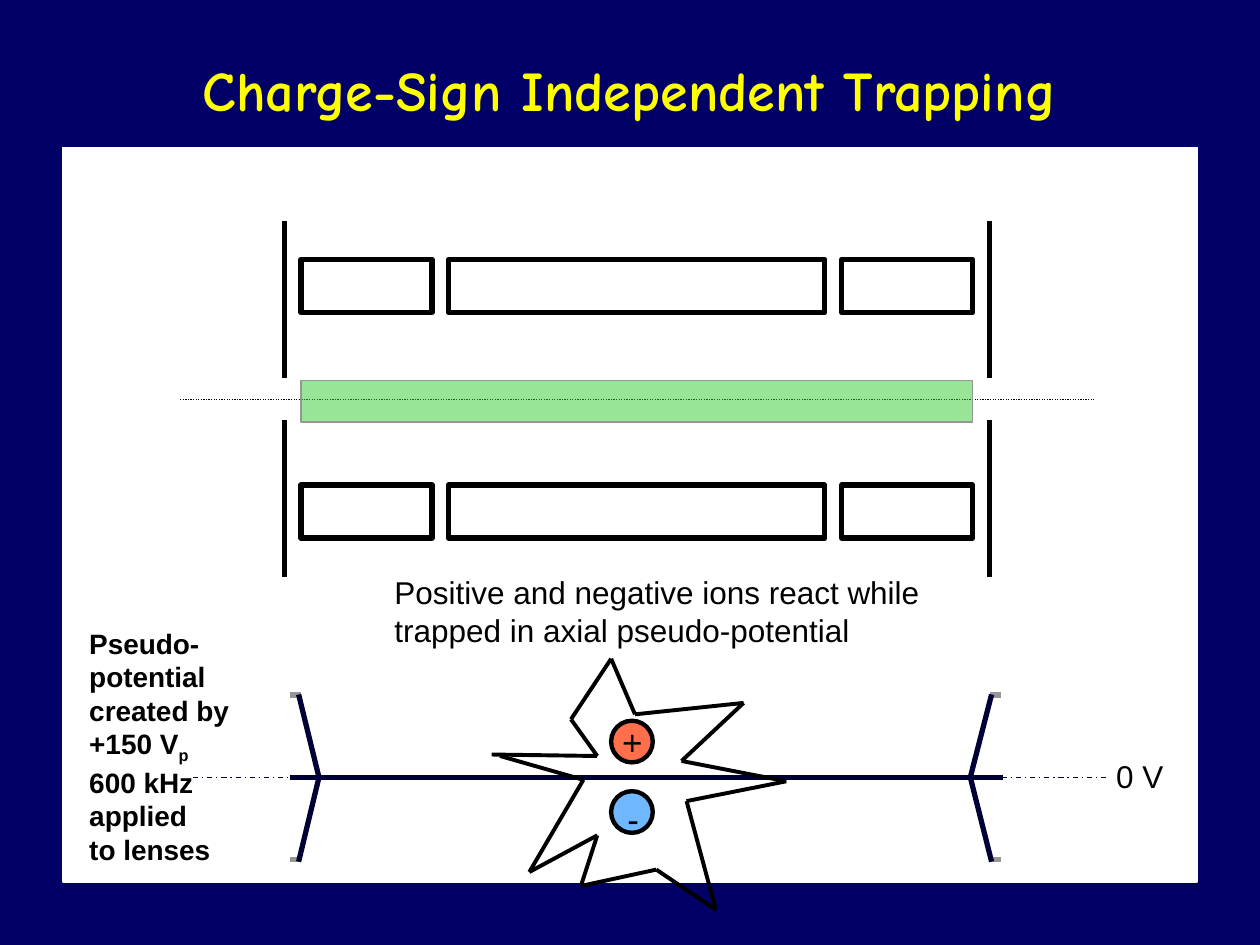
"""Build the charge-sign independent trapping slide."""
import dataclasses
import itertools

import lxml.etree
import pptx
import pptx.dml.color
import pptx.enum.dml
import pptx.enum.shapes
import pptx.enum.text
import pptx.oxml.ns
import pptx.util

Cm, Pt = pptx.util.Cm, pptx.util.Pt
SHAPE = pptx.enum.shapes.MSO_SHAPE
DASH = pptx.enum.dml.MSO_LINE
qn = pptx.oxml.ns.qn


@dataclasses.dataclass(frozen=True)
class Theme:
    """Colours, fonts and type sizes."""
    navy: str = "000066"
    white: str = "FFFFFF"
    black: str = "000000"
    yellow: str = "FFFF00"
    potential: str = "000036"
    grey: str = "969696"
    cloud: str = "33CC33"
    positive: str = "FF3300"
    negative: str = "3399FF"
    heading: str = "Comic Neue"
    body: str = "Arial"
    title: int = 32
    sign: int = 20
    label: int = 18
    note: int = 16


T = Theme()
STAR = [(10.08, 15.24), (11.76, 15.72), (10.67, 17.58), (12.04, 16.84),
        (11.71, 17.86), (13.23, 17.53), (14.43, 18.34), (13.84, 16.15),
        (15.85, 15.75), (13.74, 15.34), (14.99, 14.17), (12.8, 14.4),
        (12.32, 13.28), (11.51, 14.5), (12.04, 15.24), (9.91, 15.21)]


def rgb(color):
    """Turn a hex string into a colour."""
    return pptx.dml.color.RGBColor.from_string(color)


def add_text(shapes, box, paragraphs, size=T.label, font=T.body, color=T.black,
             bold=False, wrap=False, align=None, anchor=None):
    """Add a text box; a paragraph is a list of (text, baseline) runs."""
    sp = shapes.add_textbox(*map(Cm, box))
    tf = sp.text_frame
    tf.word_wrap = wrap
    tf.vertical_anchor = anchor
    for i, runs in enumerate(paragraphs):
        p = tf.add_paragraph() if i else tf.paragraphs[0]
        p.alignment = align
        for text, baseline in [(runs, 0)] if isinstance(runs, str) else runs:
            r = p.add_run()
            r.text = text
            r.font.size, r.font.name, r.font.bold = Pt(size), font, bold
            r.font.color.rgb = rgb(color)
            if baseline:
                r.font._element.set("baseline", str(baseline * 1000))
    return sp


def add_box(shapes, box, kind=SHAPE.RECTANGLE, fill=None, alpha=100,
            line=T.black, width=3):
    """Add a preset shape with an optional translucent fill."""
    sp = shapes.add_shape(kind, *map(Cm, box))
    sp.shadow.inherit = False
    sp.line.color.rgb = rgb(line)
    sp.line.width = Pt(width)
    if fill is None:
        sp.fill.background()
        return sp
    sp.fill.solid()
    sp.fill.fore_color.rgb = rgb(fill)
    if alpha < 100:
        clr = sp._element.spPr.find(qn("a:solidFill"))[0]
        lxml.etree.SubElement(clr, qn("a:alpha")).set("val", str(alpha * 1000))
    return sp


def add_line(shapes, start, end, color=T.black, width=3, dash=None):
    """Add a straight line."""
    sp = shapes.add_connector(pptx.enum.shapes.MSO_CONNECTOR.STRAIGHT,
                              *map(Cm, (*start, *end)))
    sp.line.color.rgb = rgb(color)
    sp.line.width = Pt(width)
    if dash is not None:
        sp.line.dash_style = dash
    lxml.etree.SubElement(sp._element.spPr, qn("a:effectLst"))
    return sp


def add_trap(shapes):
    """Draw the axis, rod segments, lenses and ion cloud."""
    add_line(shapes, (3.63, 8.05), (22.05, 8.05), width=0.75,
             dash=DASH.ROUND_DOT)
    for y in (5.23, 9.78):
        for x, w in ((6.07, 2.64), (16.97, 2.64), (9.04, 7.59)):
            add_box(shapes, (x, y, w, 1.07))
    for x, (top, bottom) in itertools.product(
            (5.74, 19.94), ((4.45, 7.62), (8.46, 11.63))):
        add_line(shapes, (x, top), (x, bottom))
    add_box(shapes, (6.07, 7.67, 13.54, 0.84), fill=T.cloud, alpha=50,
            line=T.grey, width=0.75)


def add_potential(shapes):
    """Draw the zero line and the potential walls at both ends."""
    y0 = 15.67
    add_line(shapes, (3.89, y0), (22.3, y0), color=T.potential, width=0.75,
             dash=DASH.DASH_DOT)
    add_line(shapes, (5.84, y0), (20.22, y0), color=T.potential)
    for tick, wall, foot in (((5.84, 6.07), 6.02, 6.43),
                             ((20.17, 19.96), 19.99, 19.56)):
        for tick_y, wall_y in ((14.01, 14), (17.32, 17.37)):
            add_line(shapes, (tick[0], tick_y), (tick[1], tick_y), color=T.grey)
            add_line(shapes, (wall, wall_y), (foot, y0), color=T.potential)


def add_star(shapes):
    """Draw the reaction burst as line segments."""
    for start, end in itertools.pairwise(STAR):
        add_line(shapes, start, end, width=2.25)


def add_ion(shapes, y, fill, sign, sign_box):
    """Draw an ion and its charge sign."""
    add_box(shapes, (12.32, y, 0.84, 0.84), kind=SHAPE.OVAL, fill=fill,
            alpha=70, width=2.5)
    add_text(shapes, sign_box, [sign], size=T.sign)


def main():
    """Build and save the slide."""
    prs = pptx.Presentation()
    prs.slide_width, prs.slide_height = Cm(25.4), Cm(19.05)
    s = prs.slides.add_slide(prs.slide_layouts[6])
    s.background.fill.solid()
    s.background.fill.fore_color.rgb = rgb(T.navy)
    shapes = s.shapes
    add_text(shapes, (1.9, 1.07, 21.59, 1.47),
             ["Charge-Sign Independent Trapping"], size=T.title,
             font=T.heading, color=T.yellow, bold=True, wrap=True,
             align=pptx.enum.text.PP_ALIGN.CENTER,
             anchor=pptx.enum.text.MSO_ANCHOR.MIDDLE)
    add_box(shapes, (1.27, 2.97, 22.86, 14.81), fill=T.white, line=T.white,
            width=0.75)
    add_trap(shapes.add_group_shape().shapes)
    add_text(shapes, (1.55, 12.5, 3.53, 5),
             ["Pseudo-", "potential", "created by",
              [("+150 V", 0), ("p", -25), (" 600 kHz", 0)],
              "applied", "to lenses"], size=T.note, bold=True, wrap=True)
    add_potential(shapes)
    add_ion(shapes, 14.53, T.positive, "+", (12.29, 14.4, 0.91, 1.09))
    add_text(shapes, (22.25, 15.14, 1.47, 1.02), ["0 V"])
    add_text(shapes, (7.7, 11.43, 11.1, 1.78),
             ["Positive and negative ions react while",
              "trapped in axial pseudo-potential"])
    add_star(shapes.add_group_shape().shapes)
    add_ion(shapes, 15.95, T.negative, "-", (12.4, 15.95, 0.74, 1.09))
    prs.save("out.pptx")


if __name__ == "__main__":
    main()
